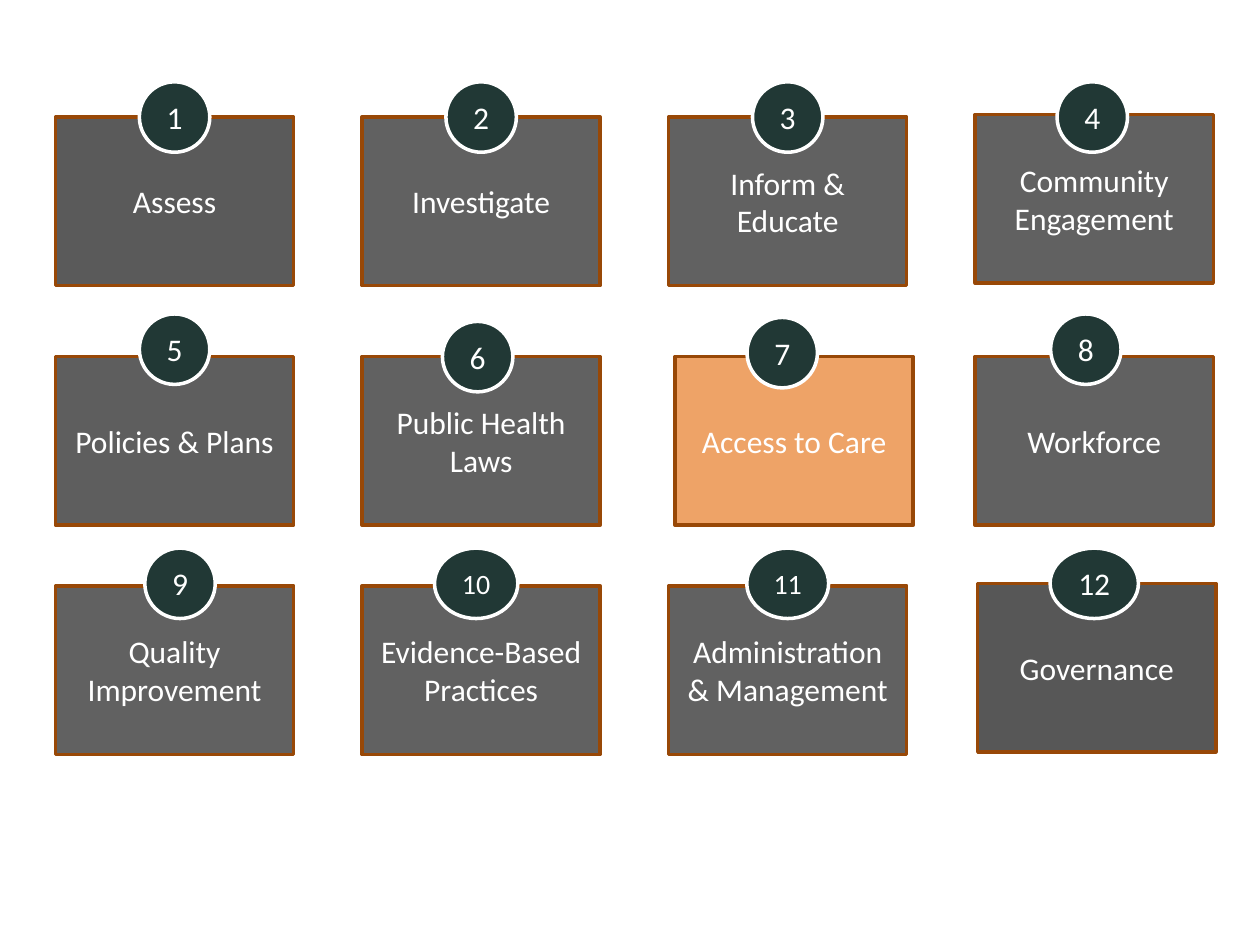
from lxml import etree
from pptx import Presentation
from pptx.dml.color import RGBColor
from pptx.enum.shapes import MSO_SHAPE
from pptx.enum.text import MSO_ANCHOR, PP_ALIGN
from pptx.oxml.ns import qn
from pptx.util import Cm, Pt

RECT, OVAL = MSO_SHAPE.RECTANGLE, MSO_SHAPE.OVAL
CENTER, MIDDLE = PP_ALIGN.CENTER, MSO_ANCHOR.MIDDLE

THEME = {
    "font": "Calibri", "text": "FFFFFF", "size": 18, "small": 16, "line": 2,
    "card": "000000", "soft": "0D0D0D", "accent": "E46C0A", "border": "984807",
    "badge": "213835", "ring": "FFFFFF",
}

CARDS = [
    {"text": "Assess", "fill": "soft", "alpha": 68},
    {"text": "Investigate"},
    {"text": "Inform & Educate"},
    {"text": "Community Engagement", "shift": (0, -0.05), "badge": (-0.04, 0)},
    {"text": "Policies & Plans", "alpha": 63, "badge": (0, -0.15)},
    {"text": "Public Health Laws", "badge": (-0.07, 0)},
    {"text": "Access to Care", "fill": "accent", "shift": (0.13, 0), "badge": (-0.11, -0.08)},
    {"text": "Workforce", "badge": (-0.17, -0.15)},
    {"text": "Quality Improvement", "badge": (0.11, -0.05)},
    {"text": "Evidence-Based Practices", "badge": (-0.1, -0.05), "badge_w": 1.68, "size": "small"},
    {"text": "Administration & Management", "badge": (0, -0.05), "badge_w": 1.65, "size": "small"},
    {"text": "Governance", "alpha": 66, "shift": (0.05, -0.05), "badge": (0, -0.05), "badge_w": 1.78},
]

COLS, LEFT, PITCH = 4, 1.12, 6.18
ROW_TOPS = (2.36, 7.19, 11.81)
CARD_W, CARD_H, BADGE = 4.8, 3.4, 1.42


def add_label(s, text, *, kind, box, fill, line, size="size", alpha=100):
    """Add a filled, outlined shape with centred text; box is in centimetres."""
    sp = s.shapes.add_shape(kind, *map(Cm, box))
    sp.shadow.inherit = False
    sp.fill.solid()
    sp.fill.fore_color.rgb = RGBColor.from_string(THEME[fill])
    if alpha < 100:
        color = sp.fill._xPr.find(qn("a:solidFill"))[0]
        etree.SubElement(color, qn("a:alpha")).set("val", str(alpha * 1000))
    sp.line.color.rgb = RGBColor.from_string(THEME[line])
    sp.line.width = Pt(THEME["line"])
    tf = sp.text_frame
    tf.word_wrap = True
    tf.vertical_anchor = MIDDLE
    p = tf.paragraphs[0]
    p.alignment = CENTER
    r = p.add_run()
    r.text = text
    r.font.name = THEME["font"]
    r.font.size = Pt(THEME[size])
    r.font.color.rgb = RGBColor.from_string(THEME["text"])


def main():
    prs = Presentation()
    prs.slide_width, prs.slide_height = Cm(25.4), Cm(19.05)
    s = prs.slides.add_slide(prs.slide_layouts[6])
    cells = [(LEFT + i % COLS * PITCH, ROW_TOPS[i // COLS]) for i in range(len(CARDS))]

    for card, (x, y) in zip(CARDS, cells):
        dx, dy = card.get("shift", (0, 0))
        add_label(s, card["text"], kind=RECT, box=(x + dx, y + dy, CARD_W, CARD_H),
                  fill=card.get("fill", "card"), line="border", alpha=card.get("alpha", 62))

    for number, (card, (x, y)) in enumerate(zip(CARDS, cells), 1):
        dx, dy = card.get("badge", (0, 0))
        w = card.get("badge_w", BADGE)
        add_label(s, str(number), kind=OVAL,
                  box=(x + (CARD_W - w) / 2 + dx, y - BADGE / 2 + dy, w, BADGE),
                  fill="badge", line="ring", size=card.get("size", "size"))

    prs.save("out.pptx")


if __name__ == "__main__":
    main()
